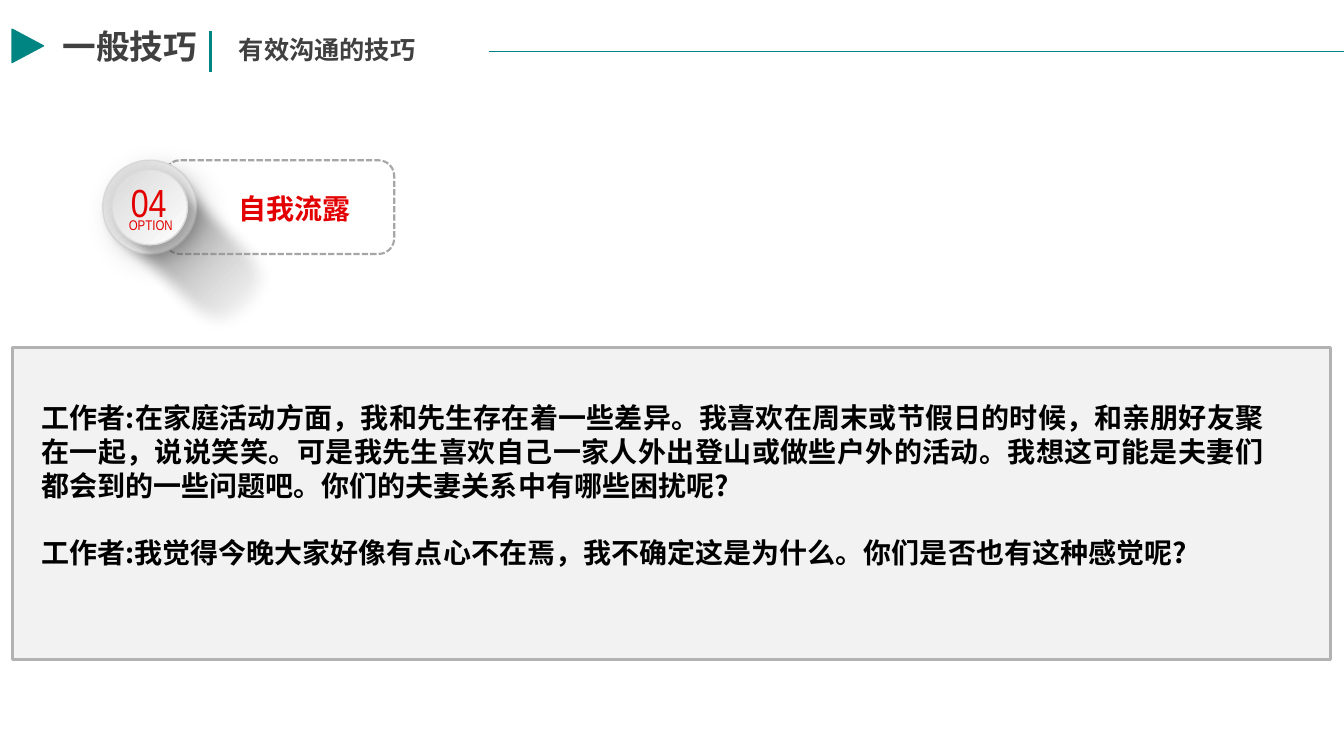
from lxml import etree
from pptx import Presentation
from pptx.dml.color import RGBColor
from pptx.enum import dml, shapes, text
from pptx.oxml import ns
from pptx.util import Inches, Pt

# Content
TITLE = "一般技巧"
TOPIC = "有效沟通的技巧"
SKILL = "自我流露"
NUM, TAG = "04", "OPTION"
LINES = [
    "工作者:在家庭活动方面，我和先生存在着一些差异。我喜欢在周末或节假日的时候，"
    "和亲朋好友聚在一起，说说笑笑。可是我先生喜欢自己一家人外出登山或做些户外的活动。"
    "我想这可能是夫妻们都会到的一些问题吧。你们的夫妻关系中有哪些困扰呢?",
    "工作者:我觉得今晚大家好像有点心不在焉，我不确定这是为什么。"
    "你们是否也有这种感觉呢?",
]

# Look
TEAL = RGBColor(0x00, 0x85, 0x82)
DARK = RGBColor(0x40, 0x40, 0x40)
BLACK = RGBColor(0, 0, 0)
RED = RGBColor(0xE3, 0, 0)
PALE = RGBColor(0xF2, 0xF2, 0xF2)
EDGE = RGBColor(0xB2, 0xB2, 0xB2)
DASH = RGBColor(0xA6, 0xA6, 0xA6)
RING = RGBColor(0xD9, 0xD9, 0xD9)
HAN, SLIM = "Noto Sans CJK SC", "Arial Narrow"
LEAD = 1.21  # line pitch of the Chinese text, in font sizes

# Centre of the badge; (size, shadow opacity, blur, distance) of its discs;
# (box, opacity, soft edge) of its long shadows
MID = (1.485, 2.055)
DISCS = [(0.93, 15, 20, 8), (0.75, 25, 13, 6)]
TAILS = [((0.83, 1.88, 2.04, 1.11), 69, 8), ((0.95, 1.98, 1.79, 0.89), 55, 6)]

prs = Presentation()
prs.slide_width, prs.slide_height = Inches(13.33), Inches(7.5)
slide = prs.slides.add_slide(prs.slide_layouts[5])


def inch(box):
    return [Inches(v) for v in box]


def put(words, box, size, color, font=HAN, bold=False, align=text.PP_ALIGN.LEFT,
        gap=0, wrap=True, holder=None):
    """Write one paragraph per item of words."""
    if holder is None:
        holder = slide.shapes.add_textbox(*inch(box))
    else:
        holder.left, holder.top, holder.width, holder.height = inch(box)
    frame = holder.text_frame
    frame.word_wrap = wrap
    frame.auto_size = text.MSO_AUTO_SIZE.NONE
    frame.vertical_anchor = text.MSO_ANCHOR.TOP
    for i, line in enumerate(words):
        para = frame.paragraphs[0] if i == 0 else frame.add_paragraph()
        para.alignment = align
        para.space_before = Pt(gap if i else 0)
        if font == HAN:
            para.line_spacing = Pt(size * LEAD)
        run = para.add_run()
        run.text = line
        run.font.size, run.font.bold, run.font.name = Pt(size), bold, font
        run.font.color.rgb = color
        east = etree.SubElement(run._r.get_or_add_rPr(), ns.qn("a:ea"))
        east.set("typeface", font)


def draw(kind, box, fill=None, line=None, width=1, turn=0):
    item = slide.shapes.add_shape(kind, *inch(box))
    item.shadow.inherit = False
    item.rotation = turn
    if fill is None:
        item.fill.background()
    else:
        item.fill.solid()
        item.fill.fore_color.rgb = fill
    if line is None:
        item.line.fill.background()
    else:
        item.line.color.rgb = line
        item.line.width = Pt(width)
    return item


def rule(x1, y1, x2, y2, width):
    item = slide.shapes.add_connector(
        shapes.MSO_CONNECTOR.STRAIGHT, *inch((x1, y1, x2, y2)))
    item.line.color.rgb = TEAL
    item.line.width = Pt(width)
    etree.SubElement(item._element.spPr, ns.qn("a:effectLst"))


def shade(item, stops, angle):
    """Two-colour gradient; each stop is a colour and an opacity in percent."""
    item.fill.gradient()
    item.fill.gradient_angle = -angle % 360
    for stop, (color, alpha) in zip(item.fill.gradient_stops, stops):
        stop.color.rgb = color
        node = stop._gs.find(ns.qn("a:srgbClr"))
        etree.SubElement(node, ns.qn("a:alpha")).set("val", str(alpha * 1000))


def effect(item, name, **attrs):
    host = item._element.spPr.find(ns.qn("a:effectLst"))
    node = etree.SubElement(host, ns.qn(name))
    for key, val in attrs.items():
        node.set(key, str(val))
    return node


# Dialogue panel
form = shapes.MSO_SHAPE
draw(form.RECTANGLE, (0.12, 3.45, 13.08, 3.09), PALE, EDGE, 2)

# Heading
put([TITLE], (0.52, 0.2, 4.33, 0.5), 24, DARK, bold=True, holder=slide.shapes.title)
put([TOPIC], (2.27, 0.29, 1.95, 0.4), 18, DARK, bold=True, wrap=False)
rule(2.09, 0.71, 2.09, 0.31, 1.75)
draw(form.ISOSCELES_TRIANGLE, (0.11, 0.3, 0.33, 0.31), TEAL, TEAL, 1, 90)
rule(4.85, 0.51, 13.33, 0.51, 1)

# Skill label
frame = draw(form.ROUNDED_RECTANGLE, (1.63, 1.59, 2.28, 0.93), None, DASH, 1.5)
frame.line.dash_style = dml.MSO_LINE.SQUARE_DOT
put([SKILL], (2.27, 1.85, 1.32, 0.44), 20, RED, bold=True)

# Badge: each disc lies on its long shadow
for (box, dark, soft), (size, alpha, blur, dist) in zip(TAILS, DISCS):
    tail = draw(form.ROUNDED_RECTANGLE, box, PALE, turn=45)
    tail.adjustments[0] = 0.5
    shade(tail, [(BLACK, dark), (PALE, 0)], 0)
    effect(tail, "a:softEdge", rad=Pt(soft))

    disc = draw(form.OVAL, (MID[0] - size / 2, MID[1] - size / 2, size, size),
                RING, RING, 1)
    shade(disc, [(RING, 100), (RGBColor(255, 255, 255), 100)], 45)
    cast = effect(disc, "a:outerShdw", blurRad=Pt(blur), dist=Pt(dist),
                  dir=45 * 60000, algn="tl", rotWithShape=0)
    tone = etree.SubElement(cast, ns.qn("a:srgbClr"))
    tone.set("val", str(BLACK))
    etree.SubElement(tone, ns.qn("a:alpha")).set("val", str(alpha * 1000))

put([NUM], (1.1, 1.72, 0.75, 0.57), 28, RED, SLIM, align=text.PP_ALIGN.CENTER)
put([TAG], (1.18, 2.1, 0.64, 0.28), 10, RED, SLIM)

# Dialogue
put(LINES, (0.31, 3.92, 12.32, 1.78), 20, BLACK, bold=True,
    align=text.PP_ALIGN.JUSTIFY, gap=20 * LEAD)

prs.save("out.pptx")
